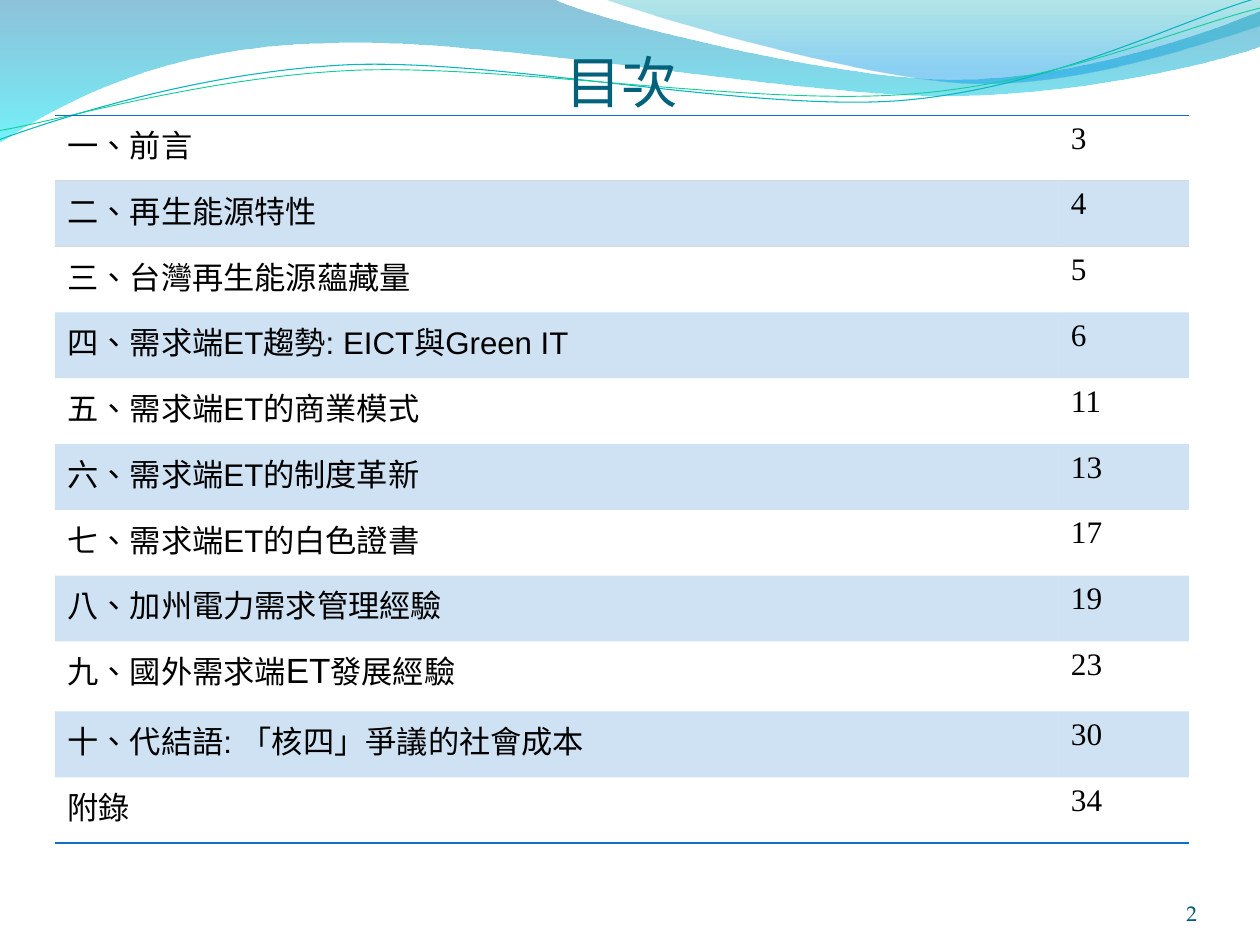
"""Builds a contents slide: wave header, title, chapter table and page number."""
from math import cos, radians, sin

from lxml.etree import SubElement
from pptx import Presentation
from pptx.dml.color import RGBColor as Rgb
from pptx.enum.lang import MSO_LANGUAGE_ID as Lang
from pptx.enum.text import MSO_ANCHOR as Anchor, PP_ALIGN as Align
from pptx.oxml import parse_xml
from pptx.oxml.ns import nsdecls, qn
from pptx.util import Inches, Pt

COLUMNS, ROWS = 14, 10.5
PLAIN_TABLE = "{2D5ABB26-0587-4C30-8999-92F81FD0307C}"
TILT = 357.3
COLORS = {
    "title": "04617B", "number": "035C75", "text": "000000", "band": "0F6FC6",
    "edge": "0F6FC6", "divider": "D8D8D8", "teal": "09B6BE", "green": "10CF9B",
    "deep": "0079AD", "cyan": "00E9F7", "sea": "00ABB4", "sky": "0099E4",
}
CHAPTERS = [
    ("一、前言", 3),
    ("二、再生能源特性", 4),
    ("三、台灣再生能源蘊藏量", 5),
    ("四、需求端ET趨勢: EICT與Green IT", 6),
    ("五、需求端ET的商業模式", 11),
    ("六、需求端ET的制度革新", 13),
    ("七、需求端ET的白色證書", 17),
    ("八、加州電力需求管理經驗", 19),
    (("九、國外需求端", "ET", "發展經驗"), 23),
    ("十、代結語: 「核四」爭議的社會成本", 30),
    ("附錄", 34),
]
LARGE_RUN, LARGE_SIZE = "ET", 28
BACK_WAVE = [
    [(0, -0.01)], [(6.16, -0.01)],
    [(6.66, 0.23), (9.29, 0.88), (10.62, 0.88)],
    [(11.94, 0.88), (13.42, 0.36), (14, 0.12)], [(14.01, 0.51)],
    [(13.77, 0.61), (12.18, 1.06), (10.44, 1.06)],
    [(8.71, 1.05), (5.34, 0.39), (3.6, 0.48)],
    [(1.81, 0.5), (0.64, 1.16), (-0.01, 1.58)], [(0, -0.01)],
]
FRONT_WAVE = [
    [(6.71, -0.01)],
    [(7.13, 0.16), (9.55, 0.86), (10.76, 0.92)],
    [(11.98, 0.97), (13.46, 0.45), (14, 0.29)], [(14, 0)], [(6.71, -0.01)],
]
TEAL_STRAND = [
    [(0, 1.55)],
    [(0.67, 1.31), (2.21, 0.8), (3.87, 0.72)],
    [(5.54, 0.65), (8.3, 1.24), (9.98, 1.12)],
    [(11.66, 0.99), (13.14, 0.21), (13.97, -0.02)],
]
GREEN_STRAND = [
    [(0, 1.45)],
    [(0.66, 1.34), (2.29, 0.85), (3.96, 0.78)],
    [(5.64, 0.72), (8.36, 1.17), (10.04, 1.05)],
    [(11.71, 0.94), (13.17, 0.29), (14, 0.09)],
]


def color(name):
    """Return the palette colour of that name."""
    return Rgb.from_string(COLORS[name])


def add_curve(slide, box, segments, close):
    """Draw corners and Bezier segments as one freeform, offset to the box."""
    placed = [[(Inches(box[0] + x), Inches(box[1] + y)) for x, y in segment]
              for segment in segments]
    anchors = [segment[-1] for segment in placed]
    builder = slide.shapes.build_freeform(*anchors[0])
    builder.add_line_segments(anchors[1:], close=close)
    curve = builder.convert_to_shape()
    curve.shadow.inherit = False
    steps = list(curve.element.iter(qn("a:lnTo")))
    for step, segment in zip(steps, placed[1:]):
        if len(segment) == 3:
            step.tag = qn("a:cubicBezTo")
            for place, (x, y) in enumerate(segment[:2]):
                handle = SubElement(step, qn("a:pt"), x=str(x - curve.left), y=str(y - curve.top))
                step.insert(place, handle)
    return curve


def add_wave(slide, box, segments, stops):
    """Fill a wave with a downward translucent gradient."""
    wave = add_curve(slide, box, segments, True)
    wave.line.fill.background()
    marks = "".join(
        f'<a:gs pos="{share * 1000}"><a:srgbClr val="{COLORS[name]}">'
        f'<a:alpha val="{alpha * 1000}"/></a:srgbClr></a:gs>'
        for share, name, alpha in stops)
    gradient = parse_xml(f'<a:gradFill {nsdecls("a")} rotWithShape="1"><a:gsLst>{marks}'
                         '</a:gsLst><a:lin ang="5400000" scaled="0"/></a:gradFill>')
    wave.element.spPr.find(qn("a:custGeom")).addnext(gradient)


def level(segments, center):
    """Turn points back about the center so that the tilt restores them."""
    turn, (mid_x, mid_y) = radians(-TILT), center
    return [[(mid_x + (x - mid_x) * cos(turn) - (y - mid_y) * sin(turn),
              mid_y + (x - mid_x) * sin(turn) + (y - mid_y) * cos(turn))
             for x, y in segment] for segment in segments]


def add_strand(slide, box, segments, name, width):
    """Draw a thin tilted open curve."""
    strand = add_curve(slide, box, level(segments, (box[2] / 2, box[3] / 2)), False)
    strand.rotation = TILT
    strand.fill.background()
    strand.line.color.rgb = color(name)
    strand.line.width = Pt(width)


def add_header(slide, box):
    """Place the two waves and the two strands."""
    add_wave(slide, box, BACK_WAVE, [(0, "deep", 45), (100, "cyan", 55)])
    add_wave(slide, box, FRONT_WAVE, [(0, "sea", 30), (80, "sky", 45), (100, "sky", 45)])
    add_strand(slide, box, TEAL_STRAND, "teal", 0.85)
    add_strand(slide, box, GREEN_STRAND, "green", 0.75)


def style(paragraph, face, size, name):
    """Set the font of a whole paragraph."""
    font = paragraph.font
    font.name, font.size, font.color.rgb = face, Pt(size), color(name)
    font.language_id = Lang.TRADITIONAL_CHINESE


def add_label(slide, box, wording, align, face, size, name, inset_top=0):
    """Place one line of text at the bottom of the box."""
    frame = slide.shapes.add_textbox(*map(Inches, box)).text_frame
    frame.word_wrap = True
    frame.vertical_anchor = Anchor.BOTTOM
    frame.margin_left = frame.margin_right = frame.margin_bottom = 0
    frame.margin_top = Inches(inset_top)
    line = frame.paragraphs[0]
    line.text, line.alignment = wording, align
    style(line, face, size, name)


def add_border(cell, side, name):
    """Give one side of a cell a one-point line."""
    border = SubElement(cell._tc.get_or_add_tcPr(), qn(f"a:{side}"), w=str(Pt(1)))
    fill = SubElement(border, qn("a:solidFill"))
    SubElement(fill, qn("a:srgbClr"), val=COLORS[name])


def fill_cell(cell, runs, face, row):
    """Write a cell and give it the borders and band of its row."""
    cell.margin_left = cell.margin_right = Inches(0.14)
    cell.margin_top = cell.margin_bottom = Inches(0.07)
    line = cell.text_frame.paragraphs[0]
    style(line, face, 25, "text")
    for wording in runs:
        run = line.add_run()
        run.text = wording
        if wording == LARGE_RUN:
            run.font.size = Pt(LARGE_SIZE)
    if row < 2:
        add_border(cell, "lnT", "divider" if row else "edge")
    if row in (0, len(CHAPTERS) - 1):
        add_border(cell, "lnB", "edge" if row else "divider")
    if row % 2:
        cell.fill.solid()
        cell.fill.fore_color.rgb = color("band")
        tint = cell._tc.tcPr.find(qn("a:solidFill"))[0]
        SubElement(tint, qn("a:alpha"), val="20000")
    else:
        cell.fill.background()


def add_contents(slide, box):
    """Place the chapter table, one row for each chapter."""
    frame = slide.shapes.add_table(len(CHAPTERS), 2, *map(Inches, box))
    table = frame.table
    table.first_row = table.horz_banding = False
    frame.element.find(f".//{qn('a:tableStyleId')}").text = PLAIN_TABLE
    page_width, tall_row = 1.45, 0.78
    short_row = (box[3] - tall_row) / (len(CHAPTERS) - 1)
    table.columns[0].width = Inches(box[2] - page_width)
    table.columns[1].width = Inches(page_width)
    for row, (chapter, page) in enumerate(CHAPTERS):
        runs = (chapter,) if isinstance(chapter, str) else chapter
        table.rows[row].height = Inches(short_row if len(runs) == 1 else tall_row)
        fill_cell(table.cell(row, 0), runs, "Arial", row)
        fill_cell(table.cell(row, 1), (str(page),), "Times New Roman", row)


def main():
    """Build and save the slide."""
    deck = Presentation()
    deck.slide_width, deck.slide_height = Inches(COLUMNS), Inches(ROWS)
    slide = deck.slides.add_slide(deck.slide_layouts[6])
    add_header(slide, (0, 0, COLUMNS, 1.6))
    add_label(slide, (0.61, 0.4, 12.6, 0.88), "目次", Align.CENTER, "Calibri", 45, "title", 0.07)
    add_label(slide, (12.13, 9.73, 1.17, 0.56), "2", Align.RIGHT, "TeX Gyre Pagella", 17, "number")
    add_contents(slide, (0.61, 1.28, 12.6, 8.09))
    deck.save("out.pptx")


if __name__ == "__main__":
    main()
